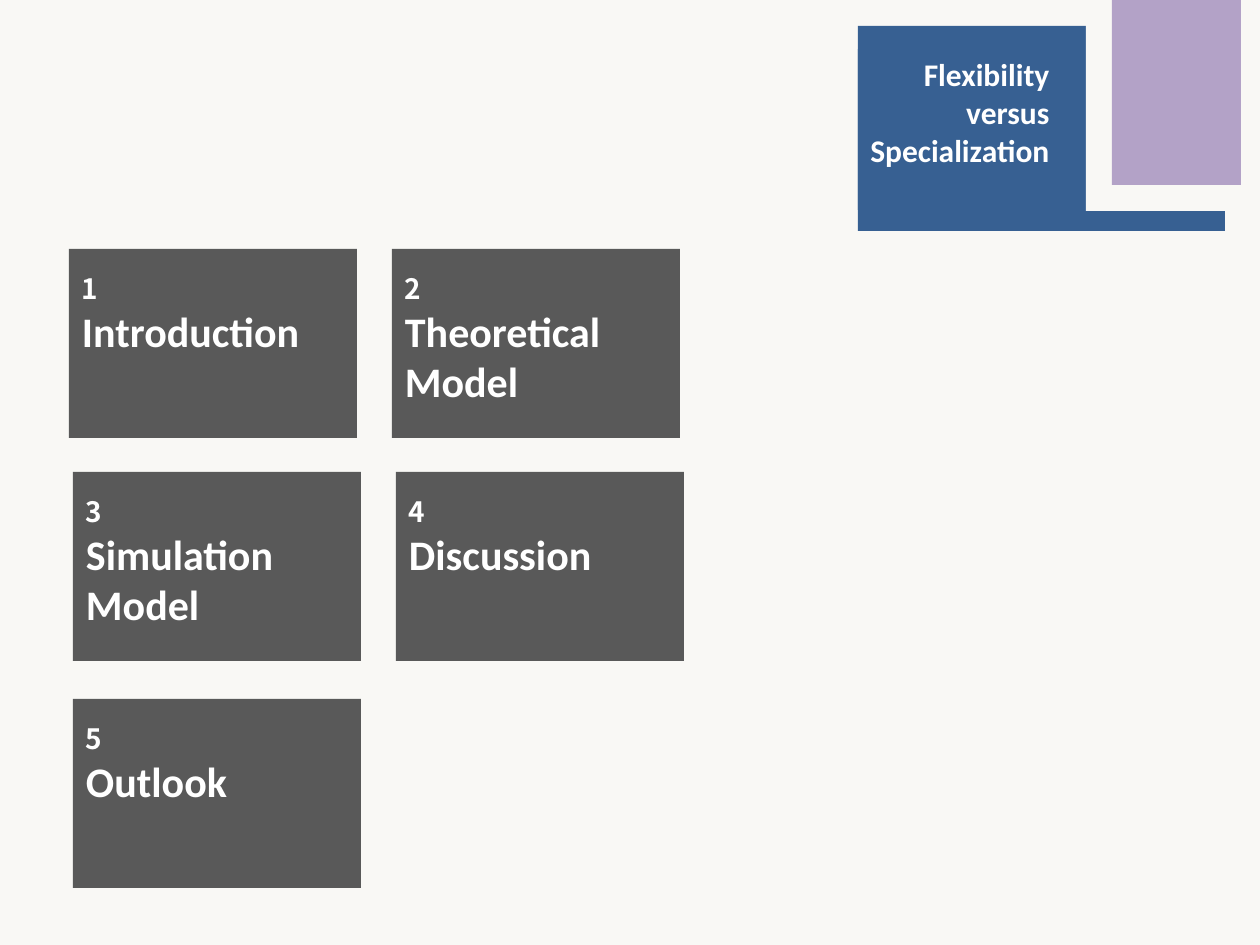
from typing import NamedTuple

from pptx import Presentation
from pptx.dml.color import RGBColor
from pptx.enum.shapes import MSO_SHAPE
from pptx.enum.text import MSO_ANCHOR, PP_ALIGN
from pptx.util import Emu, Pt

RECT = MSO_SHAPE.RECTANGLE
TOP = MSO_ANCHOR.TOP
LEFT, RIGHT = PP_ALIGN.LEFT, PP_ALIGN.RIGHT

SCALE = 914400 // 126
WIDE, HIGH = 1260, 945
CARD_W, CARD_H, STEP = 288, 189, 323
INSET, TIGHT = 13, 4
BODY, DIGIT = "Calibri", "Noto Sans CJK SC"

COLORS = {
    "paper": "F9F8F5",
    "blue": "376092",
    "purple": "B3A2C7",
    "card": "595959",
    "text": "FFFFFF",
}


class Box(NamedTuple):
    left: int
    top: int
    width: int
    height: int
    color: str
    inset: int = INSET


class Line(NamedTuple):
    text: str
    size: int
    font: str = BODY
    align: PP_ALIGN = LEFT
    space: float = 1.0


class Row(NamedTuple):
    left: int
    top: int
    titles: tuple[str, ...]


PANELS = [
    Box(0, 0, WIDE, HIGH, "paper"),
    Box(858, 26, 367, 205, "blue"),
    Box(1086, 2, 174, 209, "paper"),
    Box(1112, 0, 129, 185, "purple"),
]
TITLE = Box(858, 49, 204, 161, "blue", TIGHT)
ROWS = [
    Row(69, 249, ("Introduction", "Theoretical Model")),
    Row(73, 472, ("Simulation\vModel", "Discussion")),
    Row(73, 699, ("Outlook",)),
]


def px(count: int) -> Emu:
    return Emu(count * SCALE)


def draw(slide, box: Box, lines: tuple[Line, ...] = ()) -> None:
    """Add a flat rectangle with one paragraph for each line."""
    shape = slide.shapes.add_shape(RECT, *map(px, box[:4]))
    shape.shadow.inherit = False
    shape.fill.solid()
    shape.fill.fore_color.rgb = RGBColor.from_string(COLORS[box.color])
    shape.line.fill.background()
    frame = shape.text_frame
    frame.word_wrap = True
    frame.vertical_anchor = TOP
    frame.margin_left = px(box.inset)
    for i, line in enumerate(lines):
        para = frame.add_paragraph() if i else frame.paragraphs[0]
        para.text = line.text
        para.alignment = line.align
        para.line_spacing = line.space
        style = {"name": line.font, "size": Pt(line.size), "bold": True}
        for run in para.runs:
            for key, value in style.items():
                setattr(run.font, key, value)
            run.font.color.rgb = RGBColor.from_string(COLORS["text"])


def main() -> None:
    deck = Presentation()
    deck.slide_width, deck.slide_height = px(WIDE), px(HIGH)
    slide = deck.slides.add_slide(deck.slide_layouts[6])
    for panel in PANELS:
        draw(slide, panel)
    title = Line("Flexibility\vversus\vSpecialization", 18, align=RIGHT)
    draw(slide, TITLE, (title,))
    number = 0
    for row in ROWS:
        for col, name in enumerate(row.titles):
            number += 1
            card = Box(row.left + col * STEP, row.top, CARD_W, CARD_H, "card")
            digit = Line(str(number), 16, DIGIT, space=1.5)
            draw(slide, card, (digit, Line(name, 24)))
    deck.save("out.pptx")


if __name__ == "__main__":
    main()
